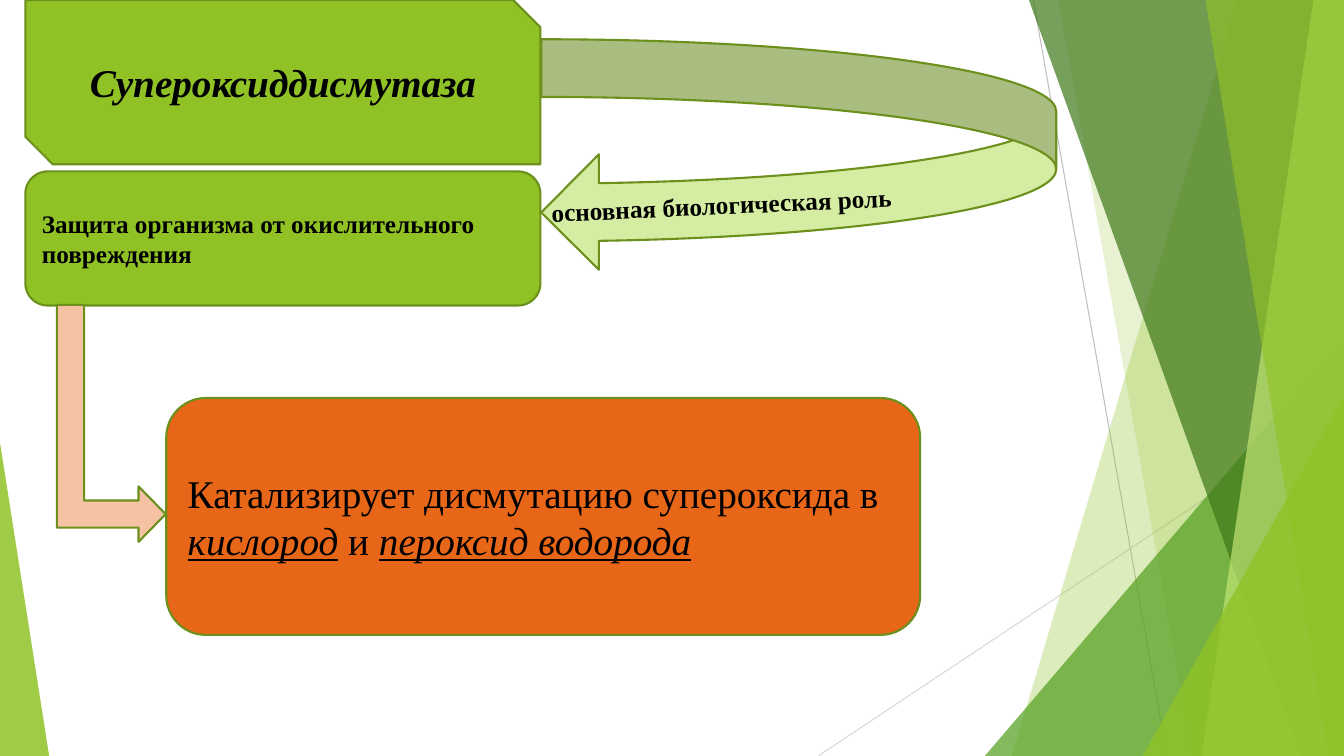
from dataclasses import dataclass

from lxml import etree
from pptx import Presentation
from pptx.dml.color import RGBColor
from pptx.enum.shapes import MSO_CONNECTOR, MSO_SHAPE
from pptx.enum.text import MSO_ANCHOR, MSO_AUTO_SIZE, PP_ALIGN
from pptx.oxml.ns import qn
from pptx.util import Cm, Pt

STRAIGHT = MSO_CONNECTOR.STRAIGHT
TRIANGLE = MSO_SHAPE.RIGHT_TRIANGLE
ISOSCELES = MSO_SHAPE.ISOSCELES_TRIANGLE
SNIPPED = MSO_SHAPE.SNIP_2_DIAG_RECTANGLE
ROUNDED = MSO_SHAPE.ROUNDED_RECTANGLE
CURVED_ARROW = MSO_SHAPE.CURVED_LEFT_ARROW
BENT_ARROW = MSO_SHAPE.BENT_UP_ARROW
MIDDLE, TOP = MSO_ANCHOR.MIDDLE, MSO_ANCHOR.TOP
LEFT, CENTER = PP_ALIGN.LEFT, PP_ALIGN.CENTER
NO_AUTOFIT = MSO_AUTO_SIZE.NONE

WIDTH, HEIGHT = 33.87, 19.05


@dataclass(frozen=True)
class Theme:
    font: str = "Times New Roman"
    large: int = 28
    small: int = 18
    text: str = "000000"
    lime: str = "90C226"
    green: str = "54A021"
    dark_green: str = "3F7819"
    pale_lime: str = "C0E474"
    outline: str = "6B901C"
    role_arrow: str = "D5EDA2"
    action_arrow: str = "F5C2A3"
    action: str = "E76618"
    ray: str = "BFBFBF"
    pale_ray: str = "D9D9D9"
    outline_width: float = 1.5
    ray_width: float = 0.75


THEME = Theme()


def paint(shape, color, opacity=100):
    """Fill without outline or shadow; opacity is in percent."""
    shape.shadow.inherit = False
    shape.fill.solid()
    shape.fill.fore_color.rgb = RGBColor.from_string(color)
    shape.line.fill.background()
    if opacity < 100:
        fill_color = shape.fill._xPr.find(qn("a:solidFill"))[0]
        alpha = etree.SubElement(fill_color, qn("a:alpha"))
        alpha.set("val", str(opacity * 1000))


def add_ray(slide, start, end, color):
    ray = slide.shapes.add_connector(
        STRAIGHT, *(Cm(value) for value in start + end))
    ray.line.color.rgb = RGBColor.from_string(color)
    ray.line.width = Pt(THEME.ray_width)
    etree.SubElement(ray._element.spPr, qn("a:effectLst"))


def add_panel(slide, top_x, bottom_x, color, opacity):
    """Full-height panel with a slanted left side, reaching the right edge."""
    builder = slide.shapes.build_freeform(Cm(top_x), Cm(0))
    corners = [(WIDTH, 0), (WIDTH, HEIGHT), (bottom_x, HEIGHT)]
    builder.add_line_segments([(Cm(x), Cm(y)) for x, y in corners], close=True)
    paint(builder.convert_to_shape(), color, opacity)


def add_corner(slide, left, top, width, apex, color, opacity):
    """Triangle standing on the bottom edge; apex is 0 (left) or 1 (right)."""
    corner = slide.shapes.add_shape(
        ISOSCELES, Cm(left), Cm(top), Cm(width), Cm(HEIGHT - top))
    corner.adjustments[0] = apex
    paint(corner, color, opacity)


def add_block(slide, kind, box, color):
    block = slide.shapes.add_shape(kind, *(Cm(value) for value in box))
    paint(block, color)
    block.line.color.rgb = RGBColor.from_string(THEME.outline)
    block.line.width = Pt(THEME.outline_width)
    return block


def write(shape, runs, size, align=LEFT, anchor=MIDDLE):
    """Fill a shape with one paragraph of (text, styles) runs."""
    frame = shape.text_frame
    frame.word_wrap = True
    frame.auto_size = NO_AUTOFIT
    frame.vertical_anchor = anchor
    paragraph = frame.paragraphs[0]
    paragraph.alignment = align
    for text, styles in runs:
        run = paragraph.add_run()
        run.text = text
        run.font.name = THEME.font
        run.font.size = Pt(size)
        run.font.color.rgb = RGBColor.from_string(THEME.text)
        run.font.bold = "b" in styles
        run.font.italic = "i" in styles
        run.font.underline = "u" in styles


def add_backdrop(slide):
    add_ray(slide, (26.04, 0), (29.41, HEIGHT), THEME.ray)
    add_ray(slide, (WIDTH, 10.24), (20.62, HEIGHT), THEME.pale_ray)
    add_panel(slide, 31.19, 25.5, THEME.lime, 30)
    add_panel(slide, 26.67, 30.05, THEME.lime, 20)
    add_corner(slide, 24.82, 8.46, 9.05, 1, THEME.green, 72)
    add_panel(slide, 25.93, 32.79, THEME.dark_green, 70)
    add_panel(slide, 33.1, 30.28, THEME.pale_lime, 70)
    add_panel(slide, 30.38, 33.48, THEME.lime, 65)
    add_corner(slide, 28.8, 9.98, 5.07, 1, THEME.lime, 80)
    add_corner(slide, 0, 11.15, 1.24, 0, THEME.lime, 85)


def add_title(slide, box, text):
    """Put the title placeholder in front of its snipped panel."""
    add_block(slide, SNIPPED, box, THEME.lime)
    title = slide.shapes.title
    title.left, title.top, title.width, title.height = map(Cm, box)
    slide.shapes._spTree.append(title._element)
    write(title, [(text, "bi")], THEME.large, CENTER)


def add_role_label(slide, text):
    label = slide.shapes.add_textbox(Cm(13.64), Cm(4.47), Cm(16.97), Cm(1.02))
    label.rotation = 357.4
    write(label, [(text, "b")], THEME.small, anchor=TOP)


def main():
    deck = Presentation()
    deck.slide_width, deck.slide_height = Cm(WIDTH), Cm(HEIGHT)
    slide = deck.slides.add_slide(deck.slide_layouts.get_by_name("Title Only"))

    add_backdrop(slide)
    add_title(slide, (0.64, 0, 12.98, 4.14), "Супероксиддисмутаза")

    add_block(slide, CURVED_ARROW, (13.64, 0.99, 12.98, 5.82), THEME.role_arrow)
    role = add_block(slide, ROUNDED, (0.64, 4.32, 12.98, 3.38), THEME.lime)
    write(role, [("Защита организма от окислительного повреждения", "b")],
          THEME.small)
    add_role_label(slide, "основная биологическая роль")

    action_arrow = add_block(
        slide, BENT_ARROW, (-0.18, 9.3, 5.97, 2.74), THEME.action_arrow)
    action_arrow.rotation = 90
    action_arrow.adjustments[1] = 0.255
    action = add_block(slide, ROUNDED, (4.19, 10.03, 19, 5.97), THEME.action)
    write(action, [
        ("Катализирует дисмутацию супероксида в ", ""),
        ("кислород", "iu"),
        (" и ", ""),
        ("пероксид водорода", "iu"),
    ], THEME.large)

    deck.save("out.pptx")


if __name__ == "__main__":
    main()
